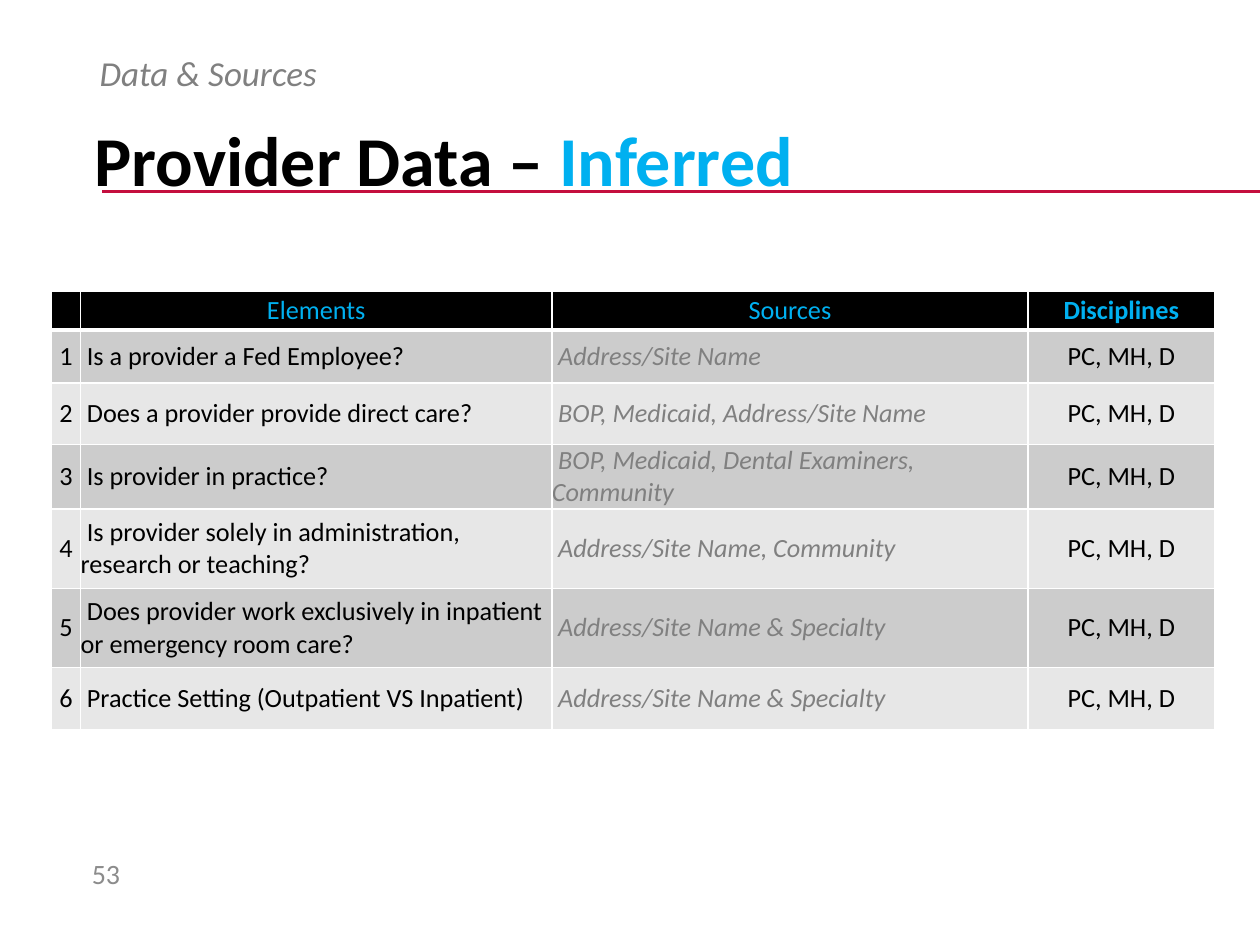
"""Build the slide that lists the inferred provider data and its sources."""
from dataclasses import dataclass

from lxml import etree
from pptx import Presentation
from pptx.dml.color import RGBColor
from pptx.enum.shapes import MSO_CONNECTOR
from pptx.enum.text import MSO_ANCHOR, MSO_AUTO_SIZE, PP_ALIGN
from pptx.oxml.ns import qn
from pptx.util import Inches, Pt

STRAIGHT = MSO_CONNECTOR.STRAIGHT
MIDDLE, TOP = MSO_ANCHOR.MIDDLE, MSO_ANCHOR.TOP
NO_AUTOFIT = MSO_AUTO_SIZE.NONE
LEFT, CENTER = PP_ALIGN.LEFT, PP_ALIGN.CENTER


@dataclass(frozen=True)
class Theme:
    font: str = "Calibri"
    black: str = "000000"
    white: str = "FFFFFF"
    accent: str = "00B0F0"
    rule: str = "C40E3E"
    muted: str = "808080"
    page: str = "8C8C8C"
    bands: tuple[str, str] = ("CCCCCC", "E7E7E7")
    title_size: int = 40
    subtitle_size: int = 20
    page_size: int = 16
    table_size: int = 15


@dataclass(frozen=True)
class Element:
    question: str
    sources: str
    height: float
    disciplines: str = "PC, MH, D"


@dataclass(frozen=True)
class Column:
    heading: str
    width: float
    color: str
    align: PP_ALIGN = CENTER
    italic: bool = False
    bold_heading: bool = False


THEME = Theme()
HEADER_HEIGHT = 0.31
FIRST_LINE_INDENT = Inches(0.05)
COLUMNS = (
    Column("", 0.23, THEME.black),
    Column("Elements", 3.74, THEME.black, LEFT),
    Column("Sources", 3.78, THEME.muted, LEFT, italic=True),
    Column("Disciplines", 1.48, THEME.black, bold_heading=True),
)
ELEMENTS = (
    Element("Is a provider a Fed Employee?", "Address/Site Name", 0.42),
    Element("Does a provider provide direct care?", "BOP, Medicaid, Address/Site Name", 0.49),
    Element("Is provider in practice?", "BOP, Medicaid, Dental Examiners, Community", 0.5),
    Element("Is provider solely in administration, research or teaching?",
            "Address/Site Name, Community", 0.63),
    Element("Does provider work exclusively in inpatient or emergency room care?",
            "Address/Site Name & Specialty", 0.63),
    Element("Practice Setting (Outpatient VS Inpatient)", "Address/Site Name & Specialty", 0.49),
)


def set_font(font, size: int, color: str, bold: bool = False, italic: bool = False) -> None:
    """Apply the theme typeface with the given look."""
    font.name, font.size, font.bold, font.italic = THEME.font, Pt(size), bold, italic
    font.color.rgb = RGBColor.from_string(color)


def place(shape, left: float, top: float, width: float, height: float, anchor: MSO_ANCHOR):
    """Move a text shape and return its first paragraph."""
    shape.left, shape.top = Inches(left), Inches(top)
    shape.width, shape.height = Inches(width), Inches(height)
    frame = shape.text_frame
    frame.word_wrap, frame.auto_size, frame.vertical_anchor = True, NO_AUTOFIT, anchor
    return frame.paragraphs[0]


def add_rule(slide) -> None:
    """Draw the line below the title."""
    line = slide.shapes.add_connector(STRAIGHT, Inches(0.81), Inches(1.52), Inches(10), Inches(1.52))
    line.line.color.rgb = RGBColor.from_string(THEME.rule)
    line.line.width = Pt(2.25)
    etree.SubElement(line._element.spPr, qn("a:effectLst"))


def fill_title(slide) -> None:
    """Write the two-coloured title."""
    paragraph = place(slide.shapes.title, 0.65, 0.89, 8.62, 0.82, MIDDLE)
    paragraph.alignment, paragraph.line_spacing = LEFT, 0.9
    for text, color in (("Provider Data – ", THEME.black), ("Inferred", THEME.accent)):
        run = paragraph.add_run()
        run.text = text
        set_font(run.font, THEME.title_size, color, bold=True)


def fill_subtitle(slide) -> None:
    """Write the section name in the body placeholder."""
    paragraph = place(slide.placeholders[1], 0.69, 0.4, 8.62, 0.49, TOP)
    paragraph.text = "Data & Sources"
    paragraph.line_spacing, paragraph.space_before = 0.9, Pt(0)
    properties = paragraph._p.get_or_add_pPr()
    properties.set("marL", "0")
    properties.set("indent", "0")
    etree.SubElement(properties, qn("a:buNone"))
    set_font(paragraph.font, THEME.subtitle_size, THEME.muted, italic=True)


def add_page_number(slide) -> None:
    """Write the page number."""
    box = slide.shapes.add_textbox(0, 0, 0, 0)
    paragraph = place(box, 0.63, 6.73, 0.55, 0.4, MIDDLE)
    paragraph.text = "53"
    set_font(paragraph.font, THEME.page_size, THEME.page)


def style_cell(cell, fill: str, bottom_width: int = 1) -> None:
    """Set the borders, fill, margins and anchor of a cell."""
    properties = cell._tc.get_or_add_tcPr()
    for side, width in (("L", 1), ("R", 1), ("T", 1), ("B", bottom_width)):
        border = etree.SubElement(properties, qn(f"a:ln{side}"), w=str(Pt(width)))
        solid = etree.SubElement(border, qn("a:solidFill"))
        etree.SubElement(solid, qn("a:srgbClr"), val=THEME.white)
    cell.fill.solid()
    cell.fill.fore_color.rgb = RGBColor.from_string(fill)
    cell.margin_left = cell.margin_right = cell.margin_top = cell.margin_bottom = 0
    cell.vertical_anchor = MIDDLE


def write_cell(cell, text: str, align: PP_ALIGN, color: str,
               bold: bool = False, italic: bool = False) -> None:
    """Write a cell, indenting the first line of left-aligned text."""
    paragraph = cell.text_frame.paragraphs[0]
    paragraph.text, paragraph.alignment = text, align
    if align == LEFT:
        paragraph._p.get_or_add_pPr().set("indent", str(FIRST_LINE_INDENT))
    set_font(paragraph.font, THEME.table_size, color, bold, italic)


def add_elements_table(slide) -> None:
    """Add the table of data elements."""
    heights = [HEADER_HEIGHT, *(element.height for element in ELEMENTS)]
    width = sum(column.width for column in COLUMNS)
    table = slide.shapes.add_table(len(heights), len(COLUMNS), Inches(0.41), Inches(2.31),
                                   Inches(width), Inches(sum(heights))).table
    for row, height in zip(table.rows, heights):
        row.height = Inches(height)
    for index, column in enumerate(COLUMNS):
        table.columns[index].width = Inches(column.width)
        header = table.cell(0, index)
        style_cell(header, THEME.black, bottom_width=3)
        write_cell(header, column.heading, CENTER, THEME.accent, column.bold_heading)
    for number, element in enumerate(ELEMENTS, start=1):
        texts = (str(number), element.question, element.sources, element.disciplines)
        for index, (column, text) in enumerate(zip(COLUMNS, texts)):
            cell = table.cell(number, index)
            style_cell(cell, THEME.bands[(number - 1) % 2])
            write_cell(cell, text, column.align, column.color, italic=column.italic)


def main() -> None:
    """Build and save the presentation."""
    presentation = Presentation()
    presentation.slide_width, presentation.slide_height = Inches(10), Inches(7.5)
    slide = presentation.slides.add_slide(presentation.slide_layouts[1])
    add_rule(slide)
    fill_title(slide)
    add_elements_table(slide)
    add_page_number(slide)
    fill_subtitle(slide)
    presentation.save("out.pptx")


if __name__ == "__main__":
    main()
